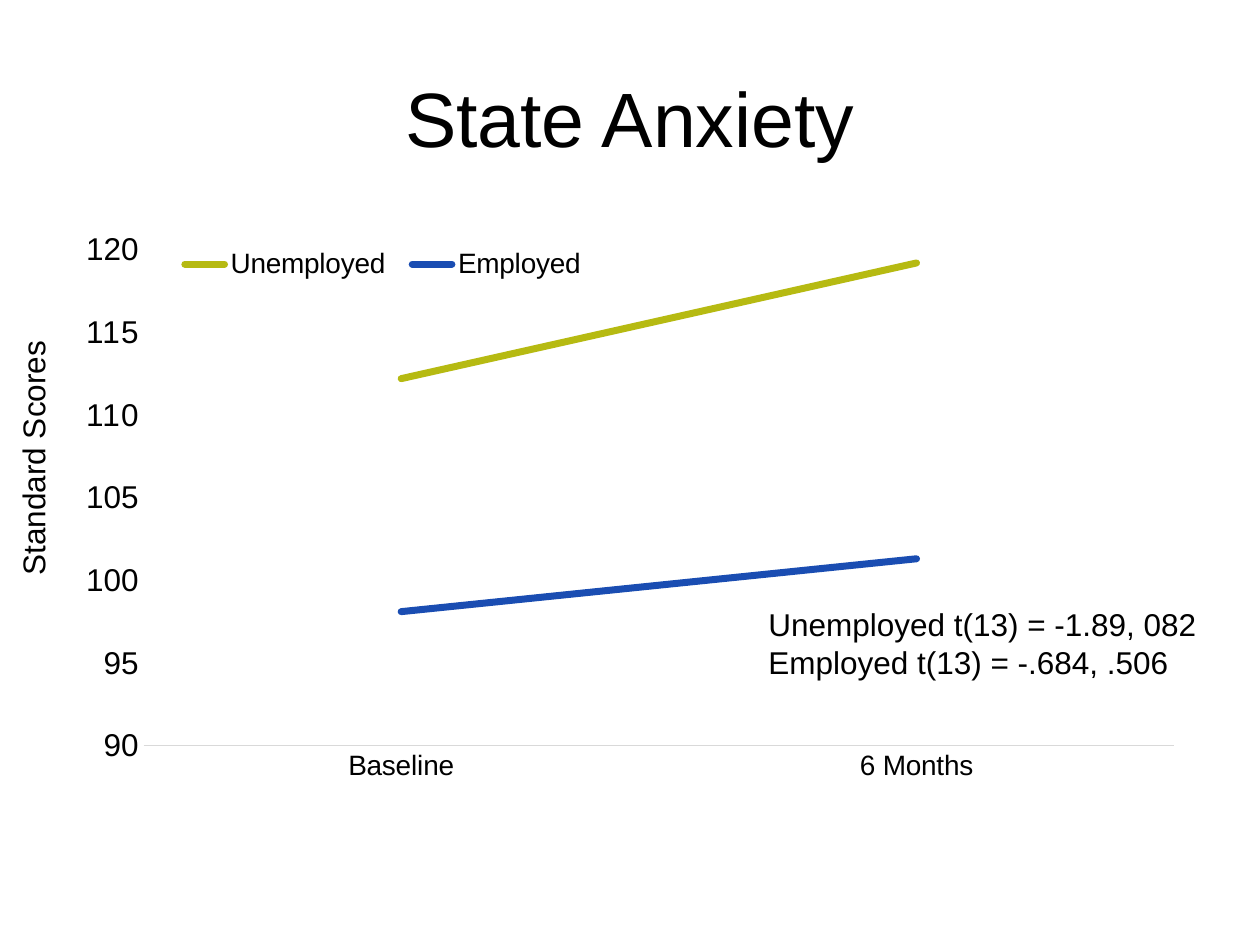
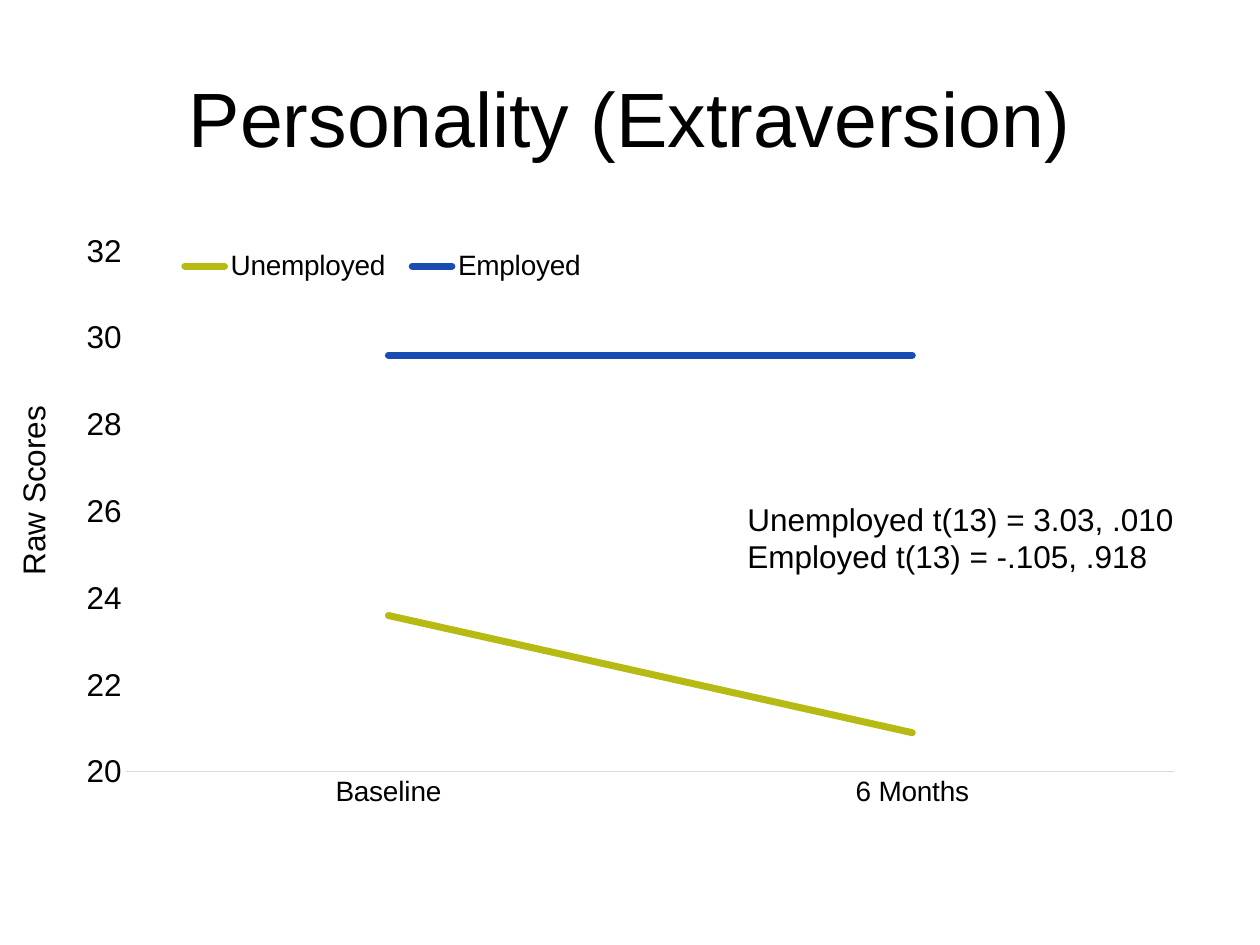
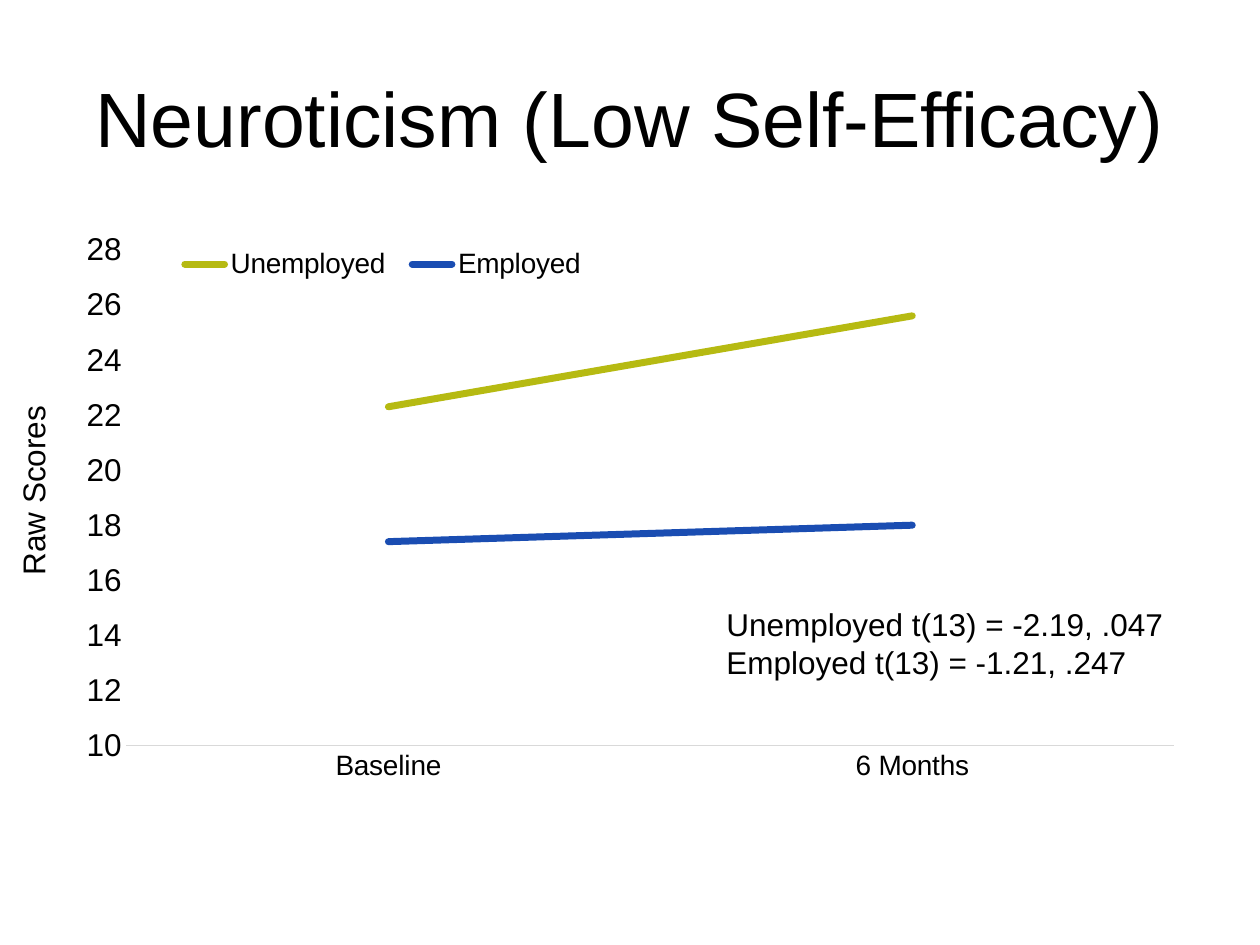
from dataclasses import dataclass

from lxml import etree
from pptx import Presentation
from pptx.chart.data import CategoryChartData
from pptx.dml.color import RGBColor
from pptx.enum.chart import XL_CHART_TYPE, XL_LEGEND_POSITION, XL_TICK_MARK
from pptx.enum.text import MSO_ANCHOR, PP_ALIGN
from pptx.oxml.ns import qn
from pptx.util import Inches, Pt

LINE = XL_CHART_TYPE.LINE
LEGEND_BOTTOM = XL_LEGEND_POSITION.BOTTOM
NO_TICK = XL_TICK_MARK.NONE
TOP, MIDDLE = MSO_ANCHOR.TOP, MSO_ANCHOR.MIDDLE
LEFT, CENTER = PP_ALIGN.LEFT, PP_ALIGN.CENTER

WIDTH, HEIGHT = Inches(10), Inches(7.5)
COLS, ROWS = 60, 90


@dataclass(frozen=True)
class Theme:
    """Colours, font and type sizes shared by the slides."""
    font: str = "Arial"
    text: str = "000000"
    axis: str = "D9D9D9"
    series: tuple = ("B6BA12", "1A4DB2")
    title_size: int = 44
    body_size: int = 18
    small_size: int = 16
    series_width: float = 4
    axis_width: float = 0.75


THEME = Theme()
TITLE_BOX = (3, 3.6, 54, 15)
LEGEND_AREA = (9.2, 3.25, 38, 7.5)
PLOT_TOP, PLOT_RIGHT = 4.7, 98
LABEL_BOTTOM = 56
CATEGORIES = ("Baseline", "6 Months")
GROUPS = ("Unemployed", "Employed")

SLIDES = (
    dict(title="State Anxiety", label="Standard Scores", label_rows=26,
         values=((112.2, 119.2), (98.1, 101.3)), scale=(90, 120, 5),
         chart_rows=59.4, plot_left=7.1, plot_bottom=84.2, note_at=(36, 57),
         note=("Unemployed t(13) = -1.89, 082", "Employed t(13) = -.684, .506")),
    dict(title="Personality (Extraversion)", label="Raw Scores", label_rows=19,
         values=((23.6, 20.9), (29.6, 29.6)), scale=(20, 32, 2),
         chart_rows=62, plot_left=5.6, plot_bottom=84.7, note_at=(35, 47),
         note=("Unemployed t(13) = 3.03, .010", "Employed t(13) = -.105, .918")),
    dict(title="Neuroticism (Low Self-Efficacy)", label="Raw Scores", label_rows=19,
         values=((22.3, 25.6), (17.4, 18)), scale=(10, 28, 2),
         chart_rows=59.4, plot_left=5.6, plot_bottom=84.2, note_at=(34, 57),
         note=("Unemployed t(13) = -2.19, .047", "Employed t(13) = -1.21, .247")),
)


def grid(box):
    """Turn columns and rows into slide lengths."""
    x, y, w, h = box
    return (int(WIDTH * x / COLS), int(HEIGHT * y / ROWS),
            int(WIDTH * w / COLS), int(HEIGHT * h / ROWS))


def style_font(font, size):
    """Apply the theme's face and text colour at a size."""
    font.name = THEME.font
    font.size = Pt(size)
    font.color.rgb = RGBColor.from_string(THEME.text)


def add_text(slide, box, *lines, size=THEME.body_size, align=LEFT, anchor=TOP, vert=None):
    """Add a text box with one paragraph per line."""
    tf = slide.shapes.add_textbox(*grid(box)).text_frame
    tf.word_wrap = True
    tf.vertical_anchor = anchor
    if vert:
        tf._txBody.find(qn("a:bodyPr")).set("vert", vert)
    for i, line in enumerate(lines):
        p = tf.add_paragraph() if i else tf.paragraphs[0]
        p.alignment = align
        r = p.add_run()
        r.text = line
        style_font(r.font, size)


def set_layout(parent, index, area, inner=False):
    """Place a chart part by percentages of the chart's size."""
    for old in parent.findall(qn("c:layout")):
        parent.remove(old)
    layout = etree.Element(qn("c:layout"))
    manual = etree.SubElement(layout, qn("c:manualLayout"))
    settings = [("layoutTarget", "inner")] if inner else []
    settings += [("xMode", "edge"), ("yMode", "edge")]
    settings += [(key, str(round(value / 100, 4))) for key, value in zip("xywh", area)]
    for key, value in settings:
        etree.SubElement(manual, qn(f"c:{key}")).set("val", value)
    parent.insert(index, layout)


def style_axes(chart, scale):
    """Set the scale, labels and lines of both axes."""
    for axis, size in ((chart.category_axis, THEME.small_size),
                       (chart.value_axis, THEME.body_size)):
        axis.has_major_gridlines = False
        axis.major_tick_mark = axis.minor_tick_mark = NO_TICK
        style_font(axis.tick_labels.font, size)
    line = chart.category_axis.format.line
    line.color.rgb = RGBColor.from_string(THEME.axis)
    line.width = Pt(THEME.axis_width)
    values = chart.value_axis
    values.format.line.fill.background()
    values.minimum_scale, values.maximum_scale, values.major_unit = scale


def add_line_chart(slide, box, values, scale, plot_left, plot_bottom):
    """Add the line chart of both groups with its legend."""
    data = CategoryChartData()
    data.categories = CATEGORIES
    for group, scores in zip(GROUPS, values):
        data.add_series(group, scores)
    chart = slide.shapes.add_chart(LINE, *grid(box), data).chart
    chart.has_title = False
    style_font(chart.font, THEME.small_size)
    style_axes(chart, scale)
    for series, color in zip(chart.plots[0].series, THEME.series):
        series.smooth = False
        line = series.format.line
        line.color.rgb = RGBColor.from_string(color)
        line.width = Pt(THEME.series_width)
        series._element.find(qn("c:spPr")).find(qn("a:ln")).set("cap", "rnd")
    chart.has_legend = True
    legend = chart.legend
    legend.position = LEGEND_BOTTOM
    legend.include_in_layout = False
    style_font(legend.font, THEME.small_size)
    set_layout(legend._element, 1, LEGEND_AREA)
    plot = (plot_left, PLOT_TOP, PLOT_RIGHT - plot_left, plot_bottom - PLOT_TOP)
    set_layout(chart._chartSpace.chart.plotArea, 0, plot, inner=True)


def add_result_slide(prs, title, label, label_rows, values, scale,
                     chart_rows, plot_left, plot_bottom, note_at, note):
    """Build one slide with title, chart, axis label and test results."""
    slide = prs.slides.add_slide(prs.slide_layouts[6])
    add_text(slide, TITLE_BOX, title, size=THEME.title_size, align=CENTER, anchor=MIDDLE)
    add_line_chart(slide, (3, 21, 54, chart_rows), values, scale, plot_left, plot_bottom)
    add_text(slide, (0.06, LABEL_BOTTOM - label_rows, 3, label_rows), label,
             anchor=MIDDLE, vert="vert270")
    add_text(slide, (*note_at, 23.5, 8.5), *note)


def main():
    """Build and save the presentation."""
    prs = Presentation()
    prs.slide_width, prs.slide_height = WIDTH, HEIGHT
    for content in SLIDES:
        add_result_slide(prs, **content)
    prs.save("out.pptx")


if __name__ == "__main__":
    main()
